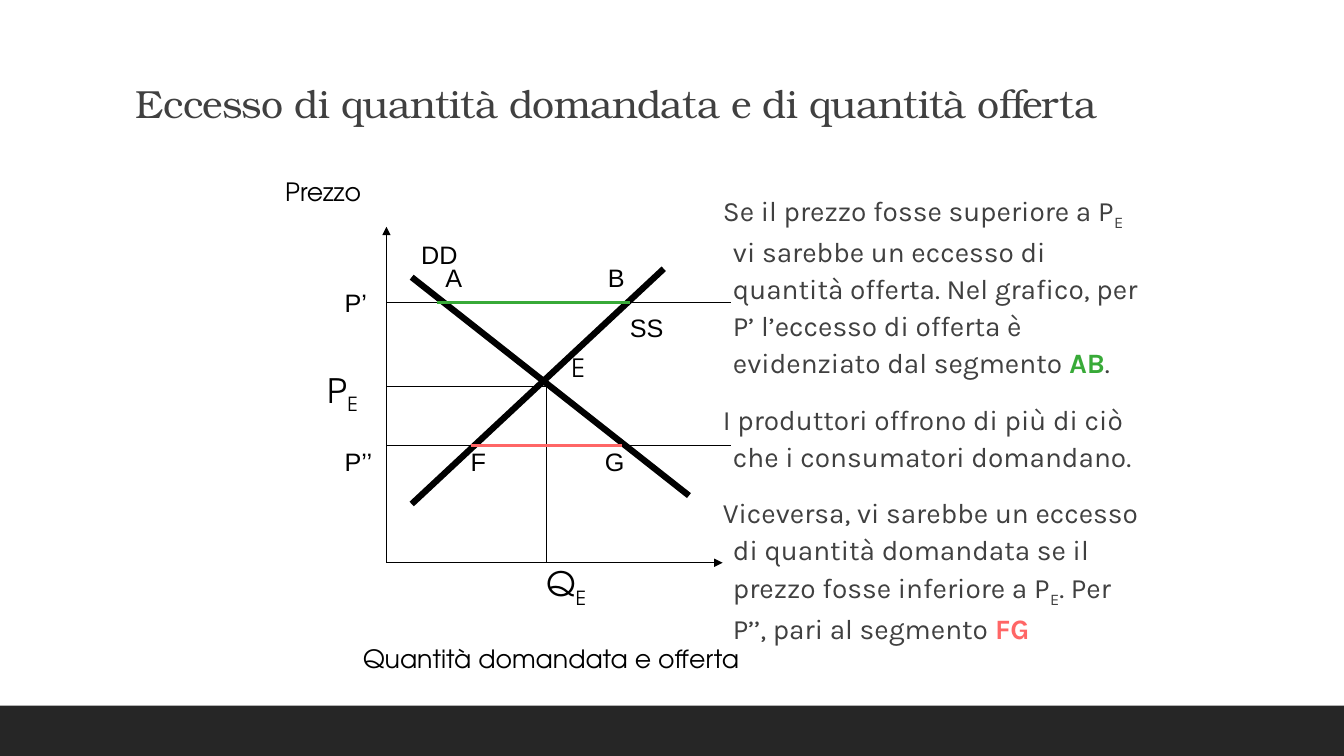
from pptx import Presentation
from pptx.util import Inches, Pt
from pptx.dml.color import RGBColor
from pptx.enum.shapes import MSO_SHAPE as Shape, MSO_CONNECTOR as Conn
from pptx.enum.text import MSO_ANCHOR as Anchor
from lxml.etree import SubElement
from pptx.oxml.ns import qn

WIDE, HIGH, UNIT = 13.33, 7.5, 1 / 12
BLACK, GREY, DARK, GREEN, RED = "000000", "404040", "262626", "38AA38", "FF6666"
SANS, GEO, SERIF, BODY = "Arial", "TeX Gyre Adventor", "TeX Gyre Bonum", "Karla"
SUB = {"base": -25}

TITLE = "Eccesso di quantità domandata e di quantità offerta"
NOTES = [
    [("Se il prezzo fosse superiore a P", {}), ("E", SUB),
     (" vi sarebbe un eccesso di quantità offerta. Nel grafico, per P’ l’eccesso "
      "di offerta è evidenziato dal segmento ", {}),
     ("AB", {"color": GREEN, "bold": True}), (".", {})],
    [("I produttori offrono di più di ciò che i consumatori domandano.", {})],
    [("Viceversa, vi sarebbe un eccesso di quantità domandata se il prezzo fosse "
      "inferiore a P", {}), ("E", SUB), (". Per P’’, pari al segmento ", {}),
     ("FG", {"color": RED, "bold": True})],
]

LEFT, BASE, END = 46, 67, 87
UPPER, EVEN, LOWER, MID = 36, 46, 53, 65
LINES = [
    ((LEFT, BASE), (LEFT, 27), BLACK, 0.75, True),
    ((LEFT, BASE), (86, BASE), BLACK, 0.75, True),
    ((49, 60), (79, 32), BLACK, 4.5, False),
    ((49, 33), (82, 59), BLACK, 4.5, False),
    ((LEFT, EVEN), (MID, EVEN), BLACK, 0.75, False),
    ((MID, EVEN), (MID, BASE), BLACK, 0.75, False),
    ((LEFT, UPPER), (END, UPPER), BLACK, 0.75, False),
    ((LEFT, LOWER), (END, LOWER), BLACK, 0.75, False),
    ((52, UPPER), (75, UPPER), GREEN, 2.25, False),
    ((56, LOWER), (74, LOWER), RED, 2.25, False),
]
LABELS = [
    ("Prezzo", 2.73, 1.7, 0.96, GEO),
    ("Quantità domandata e offerta", 3.5, 6.33, 3.96, GEO),
    ("E", 5.57, 3.45, 0.34, GEO),
    ("DD", 4.08, 2.33, 0.6, SANS),
    ("SS", 6.15, 3.05, 0.6, SANS),
    ("P’", 3.32, 2.8, 0.42, SANS),
    ("P’’", 3.32, 4.38, 0.48, SANS),
    ("A", 4.32, 2.55, 0.4, SANS),
    ("B", 5.93, 2.55, 0.4, SANS),
    ("F", 4.57, 4.38, 0.4, SANS),
    ("G", 5.9, 4.38, 0.4, SANS),
]
MARKS = [("P", 3.15, 3.62, 0.52), ("Q", 5.32, 5.54, 0.61)]

deck = Presentation()
deck.slide_width, deck.slide_height = Inches(WIDE), Inches(HIGH)
slide = deck.slides.add_slide(deck.slide_layouts[6])


def rgb(code):
    return RGBColor.from_string(code)


def write(paras, left, top, wide, high, font=SANS, size=18, color=BLACK,
          wrap=False, anchor=Anchor.TOP, inset=0.1, hang=0, line=None,
          before=0, after=0, track=0):
    box = slide.shapes.add_textbox(*map(Inches, (left, top, wide, high)))
    frame = box.text_frame
    frame.word_wrap, frame.vertical_anchor = wrap, anchor
    frame.margin_left = frame.margin_right = Inches(inset)
    if isinstance(paras, str):
        paras = [[(paras, {})]]
    for i, parts in enumerate(paras):
        para = frame.add_paragraph() if i else frame.paragraphs[0]
        para.space_before, para.space_after = Pt(before), Pt(after)
        if line:
            para.line_spacing = line
        if hang:
            props = para._p.get_or_add_pPr()
            props.set("marL", str(Inches(hang)))
            props.set("indent", str(-Inches(hang)))
        for text, look in parts:
            run = para.add_run()
            run.text = text
            run.font.name, run.font.size = font, Pt(size)
            run.font.bold = look.get("bold", False)
            run.font.color.rgb = rgb(look.get("color", color))
            props = run._r.get_or_add_rPr()
            if "base" in look:
                props.set("baseline", str(look["base"] * 1000))
            if track:
                props.set("spc", str(int(track * 100)))


def draw(start, end, color, width, arrow):
    ends = [Inches(n * UNIT) for n in start + end]
    link = slide.shapes.add_connector(Conn.STRAIGHT, *ends)
    link.line.color.rgb, link.line.width = rgb(color), Pt(width)
    if arrow:
        SubElement(link.line._get_or_add_ln(), qn("a:tailEnd"), type="triangle")
    SubElement(link._element.spPr, qn("a:effectLst"))


bar = slide.shapes.add_shape(Shape.RECTANGLE, 0, Inches(HIGH - 0.5),
                             Inches(WIDE), Inches(0.5))
bar.shadow.inherit = False
bar.fill.solid()
bar.fill.fore_color.rgb = rgb(DARK)
bar.line.fill.background()

write(TITLE, 1.25, 0.02, 10.66, 1.29, font=SERIF, size=28, color=GREY,
      wrap=True, anchor=Anchor.BOTTOM, line=0.9, track=-0.5)
write(NOTES, 7.17, 1.83, 4.23, 4.54, font=BODY, size=20, color=GREY,
      wrap=True, inset=0, hang=0.1, line=1.1, before=12, after=2)
for item in LINES:
    draw(*item)
for text, left, top, wide, font in LABELS:
    write(text, left, top, wide, 0.4, font=font)
for text, left, top, wide in MARKS:
    write([[(text, {}), ("E", SUB)]], left, top, wide, 0.5, font=GEO, size=24)

deck.save("out.pptx")
